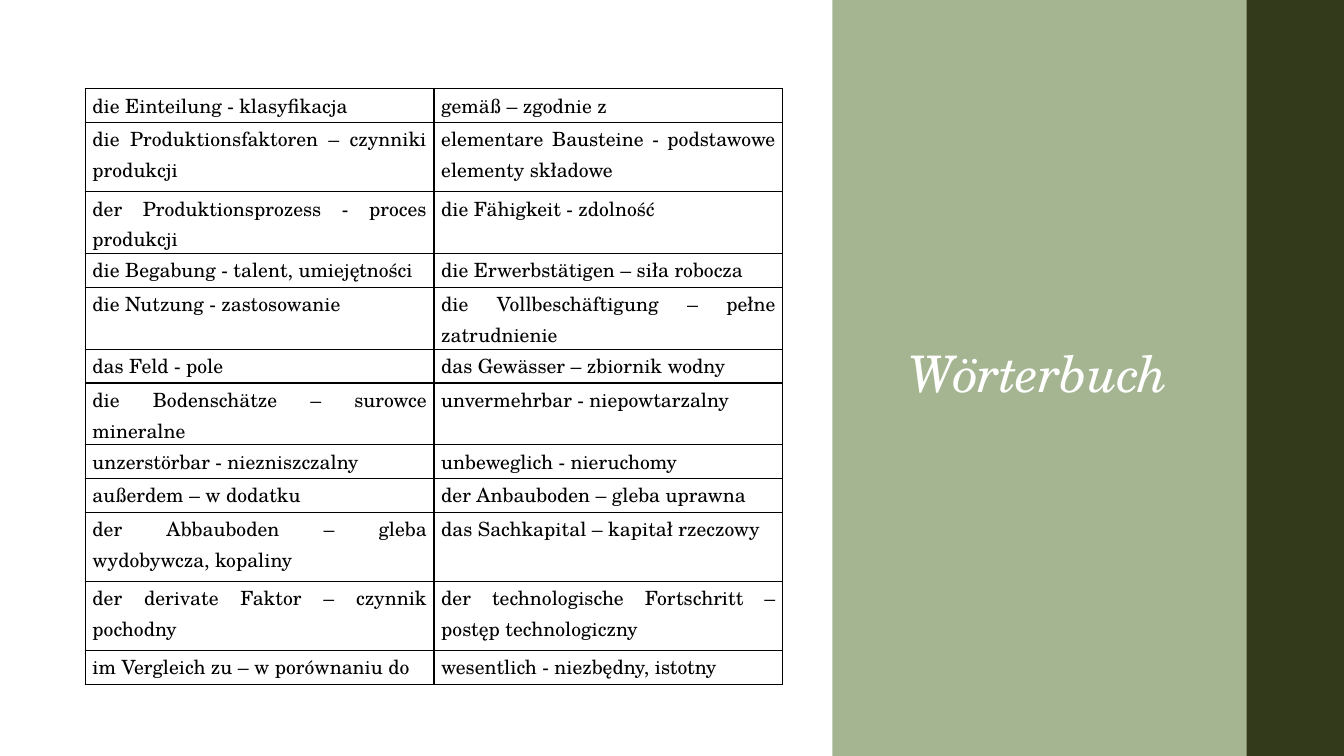
from lxml.etree import SubElement
from pptx import Presentation
from pptx.dml.color import RGBColor
from pptx.enum.shapes import MSO_SHAPE as Shape
from pptx.enum.text import MSO_ANCHOR as Anchor, PP_ALIGN as Align
from pptx.oxml.ns import qn
from pptx.util import Cm, Pt

COLORS = {"dark": "333A1C", "sage": "A5B592", "white": "FFFFFF", "black": "000000"}
FONT = "TeX Gyre Schola"
SINGLE, DOUBLE, SPACED = 0.85, 1.56, 1.74  # row heights in cm

VOCABULARY = [
    (SINGLE, "die Einteilung - klasyfikacja", "gemäß – zgodnie z"),
    (SPACED, "die Produktionsfaktoren – czynniki produkcji",
     "elementare Bausteine - podstawowe elementy składowe"),
    (DOUBLE, "der Produktionsprozess - proces produkcji", "die Fähigkeit - zdolność"),
    (SINGLE, "die Begabung - talent, umiejętności", "die Erwerbstätigen – siła robocza"),
    (DOUBLE, "die Nutzung - zastosowanie", "die Vollbeschäftigung – pełne zatrudnienie"),
    (SINGLE, "das Feld - pole", "das Gewässer – zbiornik wodny"),
    (DOUBLE, "die Bodenschätze – surowce mineralne", "unvermehrbar - niepowtarzalny"),
    (SINGLE, "unzerstörbar - niezniszczalny", "unbeweglich - nieruchomy"),
    (SINGLE, "außerdem – w dodatku", "der Anbauboden – gleba uprawna"),
    (SPACED, "der Abbauboden – gleba wydobywcza, kopaliny",
     "das Sachkapital – kapitał rzeczowy"),
    (SPACED, "der derivate Faktor – czynnik pochodny",
     "der technologische Fortschritt – postęp technologiczny"),
    (SINGLE, "im Vergleich zu – w porównaniu do", "wesentlich - niezbędny, istotny"),
]


def style(run, size, color):
    run.font.name = FONT
    run.font.size = Pt(size)
    run.font.color.rgb = RGBColor.from_string(COLORS[color])


def add_borders(cell):
    """Draw a 1 pt black line on all four sides of a table cell."""
    properties = cell._tc.get_or_add_tcPr()
    for side in ("lnL", "lnR", "lnT", "lnB"):
        line = SubElement(properties, qn(f"a:{side}"), w=str(Pt(1)))
        fill = SubElement(line, qn("a:solidFill"))
        SubElement(fill, qn("a:srgbClr"), val=COLORS["black"])


prs = Presentation()
prs.slide_width, prs.slide_height = Cm(33.87), Cm(19.05)
slide = prs.slides.add_slide(prs.slide_layouts[6])

# Side bands
for left, width, color in [(31.37, 2.5, "dark"), (20.98, 10.44, "sage")]:
    band = slide.shapes.add_shape(Shape.RECTANGLE, Cm(left), 0, Cm(width), prs.slide_height)
    band.shadow.inherit = False
    band.fill.solid()
    band.fill.fore_color.rgb = RGBColor.from_string(COLORS[color])
    band.line.fill.background()

# Title
title = slide.shapes.add_textbox(Cm(22.65), Cm(2.24), Cm(7.85), Cm(14.48)).text_frame
title.word_wrap = True
title.vertical_anchor = Anchor.MIDDLE
title.text = "Wörterbuch"
heading = title.paragraphs[0]
heading.line_spacing = 0.9
heading_run = heading.runs[0]
style(heading_run, 36, "white")
heading_run.font.italic = True
heading_run._r.get_or_add_rPr().set("spc", "-50")

# Vocabulary table
table_height = sum(height for height, *_ in VOCABULARY)
glossary = slide.shapes.add_table(
    len(VOCABULARY), 2, Cm(2.15), Cm(2.24), Cm(17.58), Cm(table_height)).table
glossary.first_row = False
glossary.horz_banding = False

for row, (height, *entries) in zip(glossary.rows, VOCABULARY):
    row.height = Cm(height)
    for cell, entry in zip(row.cells, entries):
        cell.margin_left = cell.margin_right = Cm(0.18)
        cell.margin_top = cell.margin_bottom = 0
        add_borders(cell)
        cell.fill.background()
        cell.text_frame.text = entry
        paragraph = cell.text_frame.paragraphs[0]
        paragraph.alignment = Align.JUSTIFY
        paragraph.line_spacing = 1.07
        paragraph.space_after = Pt(8)
        style(paragraph.runs[0], 14, "black")

prs.save("out.pptx")
